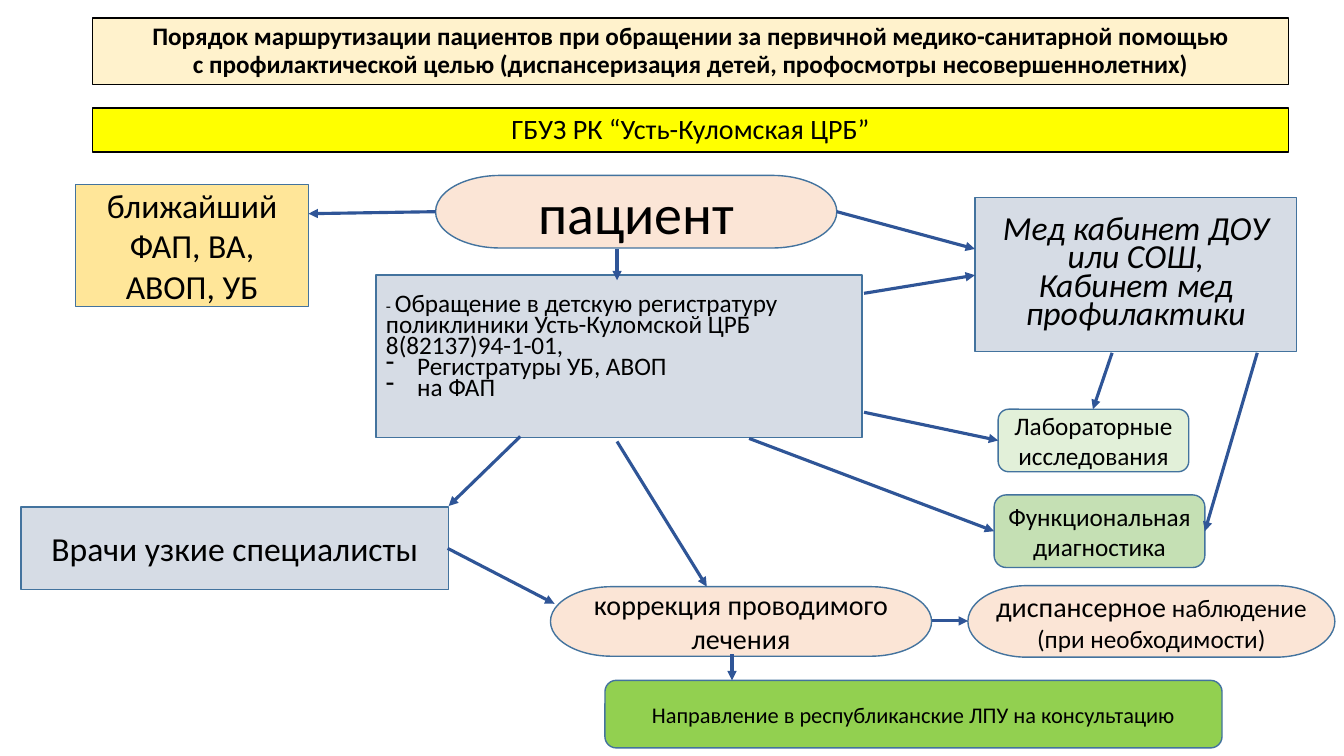
from dataclasses import dataclass

from lxml.etree import SubElement
from pptx import Presentation
from pptx.dml.color import RGBColor
from pptx.enum.shapes import MSO_CONNECTOR, MSO_SHAPE
from pptx.enum.text import MSO_ANCHOR, MSO_AUTO_SIZE, PP_ALIGN
from pptx.oxml.ns import qn
from pptx.shapes.autoshape import Shape
from pptx.slide import Slide
from pptx.util import Inches, Pt

FONT = "Calibri"
BLACK = RGBColor(0x00, 0x00, 0x00)
OUTLINE = RGBColor(0x43, 0x73, 0x9E)
ARROW_BLUE = RGBColor(0x2F, 0x55, 0x97)
CREAM = RGBColor(0xFF, 0xF2, 0xCC)
YELLOW = RGBColor(0xFF, 0xFF, 0x00)
GREY_BLUE = RGBColor(0xD6, 0xDC, 0xE5)
PEACH = RGBColor(0xFB, 0xE5, 0xD6)
PALE_GREEN = RGBColor(0xE2, 0xF0, 0xD9)
SOFT_GREEN = RGBColor(0xC5, 0xE0, 0xB4)
BRIGHT_GREEN = RGBColor(0x92, 0xD0, 0x50)
GOLD = RGBColor(0xFF, 0xE6, 0x99)

RECT = MSO_SHAPE.RECTANGLE
ROUNDED = MSO_SHAPE.ROUNDED_RECTANGLE
TERMINATOR = MSO_SHAPE.FLOWCHART_TERMINATOR


@dataclass(frozen=True)
class Run:
    text: str
    size: int
    bold: bool = False
    italic: bool = False


@dataclass(frozen=True)
class Para:
    runs: tuple[Run, ...]
    bullet: bool = False


@dataclass(frozen=True)
class Box:
    at: tuple[float, float, float, float]
    fill: RGBColor
    paras: tuple[Para, ...]
    kind: MSO_SHAPE = RECT
    line: RGBColor = OUTLINE
    align: PP_ALIGN = PP_ALIGN.CENTER
    spacing: float = 1.0
    bottom_inset: float = 0.05


@dataclass(frozen=True)
class Arrow:
    start: tuple[float, float]
    end: tuple[float, float]


def plain(text: str, size: int, bold: bool = False, italic: bool = False) -> Para:
    return Para((Run(text, size, bold, italic),))


TITLE = Box(
    (0.92, 0.18, 11.86, 0.66), CREAM,
    (plain("Порядок маршрутизации пациентов при обращении за первичной медико-санитарной помощью\n"
           "с профилактической целью (диспансеризация детей, профосмотры несовершеннолетних)",
           18, bold=True),),
    line=BLACK, spacing=0.9)

BOXES = [
    Box((0.92, 1.07, 11.86, 0.44), YELLOW, (plain("ГБУЗ РК “Усть-Куломская ЦРБ”", 20),),
        line=BLACK, spacing=0.9),
    Box((3.73, 2.73, 4.82, 1.61), GREY_BLUE,
        (Para((Run("- ", 12),
               Run("Обращение в детскую регистратуру поликлиники Усть-Куломской ЦРБ "
                   "8(82137)94-1-01,", 18))),
         Para((Run("Регистратуры УБ, АВОП", 18),), bullet=True),
         Para((Run("на ФАП", 18),), bullet=True)),
        align=PP_ALIGN.LEFT, spacing=0.7, bottom_inset=0.21),
    Box((4.32, 1.74, 3.98, 0.72), PEACH, (plain("пациент", 40),), TERMINATOR),
    Box((9.67, 1.96, 3.19, 1.53), GREY_BLUE,
        (plain("Мед кабинет ДОУ или СОШ,", 24, italic=True),
         plain("Кабинет мед профилактики", 24, italic=True)), spacing=0.7),
    Box((0.21, 5.03, 4.24, 0.82), GREY_BLUE, (plain("Врачи узкие специалисты", 24),)),
    Box((9.9, 4.06, 1.89, 0.62), PALE_GREEN, (plain("Лабораторные исследования", 18),), ROUNDED),
    Box((9.86, 4.91, 2.09, 0.72), SOFT_GREEN, (plain("Функциональная диагностика", 18),), ROUNDED),
    Box((5.46, 5.82, 3.78, 0.69), PEACH, (plain("коррекция проводимого лечения", 20),), TERMINATOR),
    Box((9.6, 5.81, 3.64, 0.71), PEACH,
        (Para((Run("диспансерное", 20), Run(" наблюдение (при необходимости)", 18))),), TERMINATOR),
    Box((0.75, 1.83, 2.31, 1.21), GOLD, (plain("ближайший ФАП, ВА, АВОП, УБ", 24),)),
    Box((6, 6.75, 6.12, 0.67), BRIGHT_GREEN,
        (plain("Направление в республиканские ЛПУ на консультацию", 16),), ROUNDED),
]

ARROWS = [
    Arrow((4.32, 2.1), (3.06, 2.12)),
    Arrow((6.12, 2.47), (6.12, 2.78)),
    Arrow((8.3, 2.1), (9.67, 2.47)),
    Arrow((8.57, 2.91), (9.67, 2.73)),
    Arrow((6.12, 4.38), (7.01, 5.82)),
    Arrow((8.57, 4.09), (9.9, 4.37)),
    Arrow((7.43, 4.35), (9.86, 5.27)),
    Arrow((4.44, 5.44), (5.5, 5.99)),
    Arrow((9.24, 6.16), (9.6, 6.16)),
    Arrow((7.26, 6.49), (7.26, 6.75)),
    Arrow((5.16, 4.33), (4.45, 5.02)),
    Arrow((11.03, 3.5), (10.84, 4.06)),
    Arrow((12.47, 3.5), (11.95, 5.27)),
]


def write_text(sp: Shape, box: Box) -> None:
    tf = sp.text_frame
    tf.word_wrap = True
    tf.auto_size = MSO_AUTO_SIZE.NONE
    tf.vertical_anchor = MSO_ANCHOR.MIDDLE
    tf.margin_left = tf.margin_right = Inches(0.1)
    tf.margin_top = Inches(0.05)
    tf.margin_bottom = Inches(box.bottom_inset)
    for i, para in enumerate(box.paras):
        p = tf.add_paragraph() if i else tf.paragraphs[0]
        p.alignment = box.align
        p.line_spacing = box.spacing
        if para.bullet:
            pPr = p._p.get_or_add_pPr()
            pPr.set("marL", str(Inches(0.31)))
            pPr.set("indent", str(-Inches(0.31)))
            SubElement(pPr, qn("a:buFontTx"))
            SubElement(pPr, qn("a:buChar")).set("char", "-")
        for run in para.runs:
            for j, text in enumerate(run.text.split("\n")):
                if j:
                    p.add_line_break()
                r = p.add_run()
                r.text = text
                r.font.name = FONT
                r.font.size = Pt(run.size)
                r.font.bold = run.bold
                r.font.italic = run.italic
                r.font.color.rgb = BLACK


def format_box(sp: Shape, box: Box) -> None:
    sp.left, sp.top, sp.width, sp.height = map(Inches, box.at)
    sp.fill.solid()
    sp.fill.fore_color.rgb = box.fill
    sp.line.color.rgb = box.line
    sp.line.width = Pt(1)
    sp.shadow.inherit = False
    write_text(sp, box)


def add_arrow(s: Slide, arrow: Arrow) -> None:
    cn = s.shapes.add_connector(
        MSO_CONNECTOR.STRAIGHT, *map(Inches, arrow.start + arrow.end))
    cn.line.color.rgb = ARROW_BLUE
    cn.line.width = Pt(2.25)
    SubElement(cn.line._get_or_add_ln(), qn("a:tailEnd")).set("type", "triangle")
    SubElement(cn._element.spPr, qn("a:effectLst"))


def main() -> None:
    prs = Presentation()
    prs.slide_width, prs.slide_height = Inches(13.33), Inches(7.5)
    s = prs.slides.add_slide(prs.slide_layouts.get_by_name("Title Only"))
    format_box(s.shapes.title, TITLE)
    for box in BOXES:
        format_box(s.shapes.add_shape(box.kind, *map(Inches, box.at)), box)
    for arrow in ARROWS:
        add_arrow(s, arrow)
    prs.save("out.pptx")


if __name__ == "__main__":
    main()
